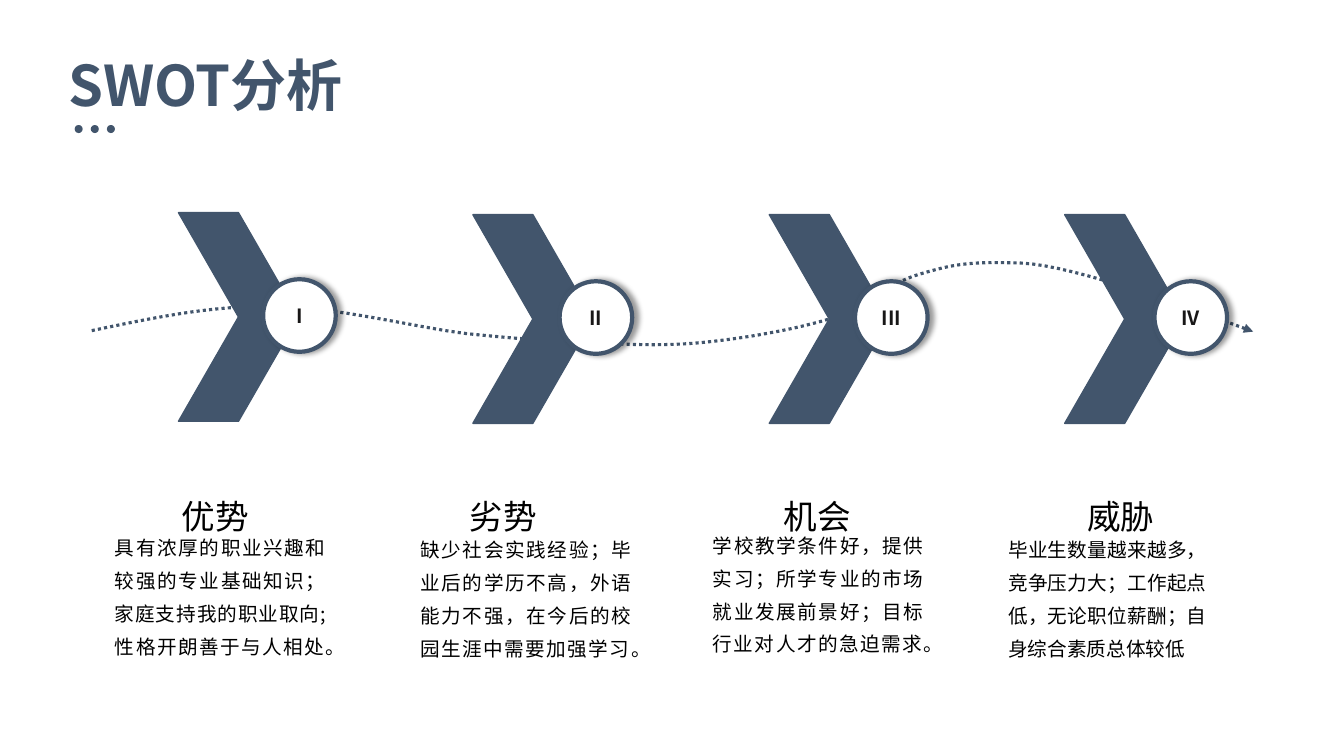
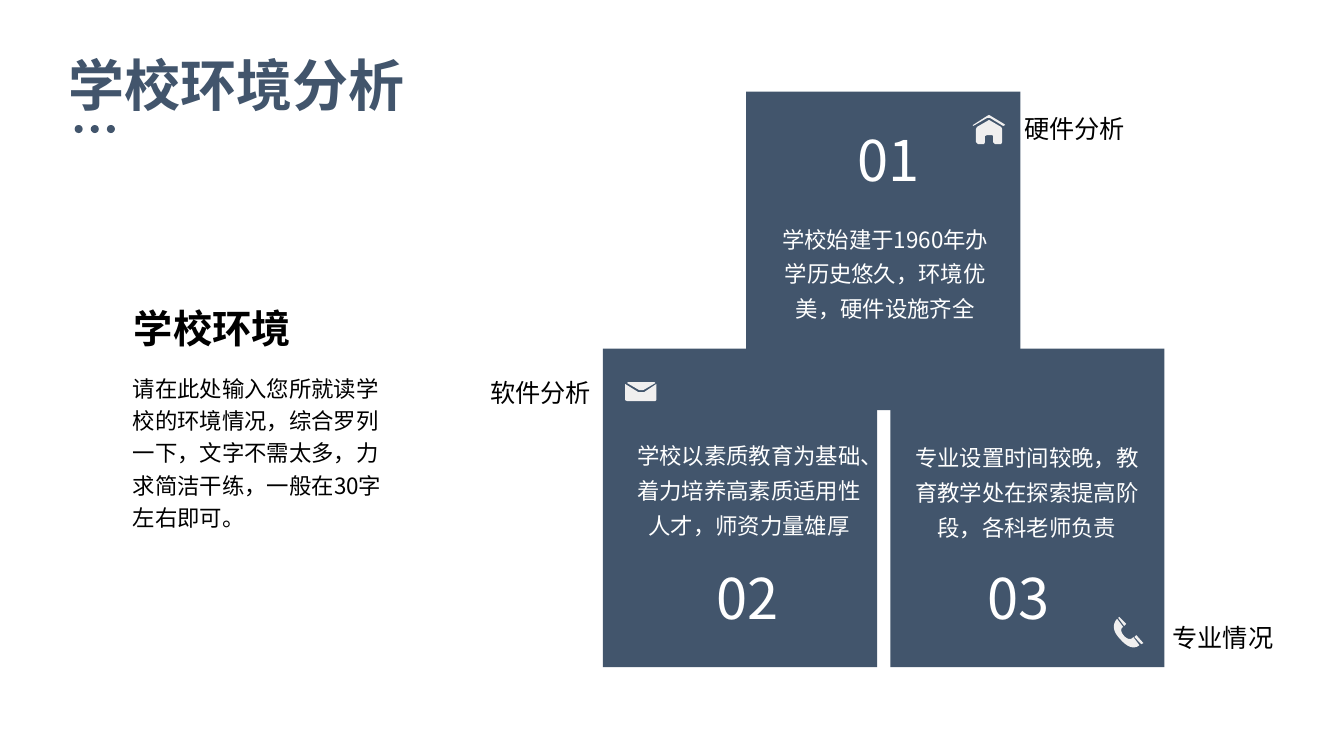
from dataclasses import dataclass
from typing import Any, NamedTuple

from lxml.etree import SubElement
from pptx import Presentation
from pptx.dml.color import RGBColor
from pptx.enum.dml import MSO_LINE
from pptx.enum.shapes import MSO_SHAPE
from pptx.enum.text import MSO_ANCHOR, MSO_AUTO_SIZE, PP_ALIGN
from pptx.oxml.ns import qn
from pptx.util import Pt

# Shared look: 100 px to the inch
PX = 9144
FONT = "Noto Sans CJK SC"
NAVY = RGBColor(0x42, 0x55, 0x6C)
BLACK = RGBColor(0x00, 0x00, 0x00)
WHITE = RGBColor(0xFF, 0xFF, 0xFF)
INK = RGBColor(0x18, 0x17, 0x17)
ICON_GREY = RGBColor(0xF0, 0xEF, 0xEF)
NO_INSETS = dict.fromkeys(("margin_left", "margin_top", "margin_right", "margin_bottom"), 0)

Point = tuple[float, float]


class Box(NamedTuple):
    left: int
    top: int
    width: int
    height: int

    def emu(self) -> list[int]:
        return [side * PX for side in self]


@dataclass(frozen=True)
class Style:
    size: int
    color: RGBColor = BLACK
    bold: bool = False
    align: PP_ALIGN = PP_ALIGN.LEFT
    spacing: Any = 1.0
    wrap: bool = True
    insets: bool = True


@dataclass(frozen=True)
class Factor:
    numeral: str
    name: str
    detail: str
    chevron: tuple[int, int]
    circle: tuple[int, int]
    name_left: int
    detail_box: Box


@dataclass(frozen=True)
class Tile:
    number: str
    label: str
    detail: str
    square: tuple[int, int]
    number_at: tuple[int, int]
    label_at: tuple[int, int]
    label_align: PP_ALIGN
    detail_box: Box


TITLE = Style(40, NAVY, True, insets=False)
NUMERAL = Style(14, INK, True, PP_ALIGN.CENTER)
FACTOR_NAME = Style(24, align=PP_ALIGN.CENTER, spacing=1.4, wrap=False, insets=False)
FACTOR_DETAIL = Style(14, align=PP_ALIGN.JUSTIFY, spacing=1.4, insets=False)
TILE_NUMBER = Style(40, WHITE, wrap=False)
TILE_DETAIL = Style(16, WHITE, align=PP_ALIGN.CENTER, spacing=1.3)
INTRO_HEAD = Style(28, bold=True)
INTRO_BODY = Style(16, spacing=Pt(23))

# Content of the SWOT slide
FACTORS = [
    Factor("I", "优势", "具有浓厚的职业兴趣和较强的专业基础知识；家庭支持我的职业取向;性格开朗善于与人相处。",
           (177, 211), (261, 277), 180, Box(114, 522, 209, 132)),
    Factor("II", "劣势", "缺少社会实践经验；毕业后的学历不高，外语能力不强，在今后的校园生涯中需要加强学习。",
           (469, 213), (555, 279), 466, Box(417, 524, 209, 132)),
    Factor("III", "机会", "学校教学条件好，提供实习；所学专业的市场就业发展前景好；目标行业对人才的急迫需求。",
           (763, 213), (848, 279), 777, Box(707, 520, 209, 132)),
    Factor("IV", "威胁", "毕业生数量越来越多，竞争压力大；工作起点低，无论职位薪酬；自身综合素质总体较低",
           (1056, 213), (1145, 279), 1078, Box(1000, 524, 197, 132)),
]
WAVE: list[Point] = [
    (91, 328), (149, 316), (208, 303), (270, 304), (332, 304), (413, 325), (463, 331),
    (512, 336), (529, 337), (568, 339), (606, 341), (652, 344), (694, 340),
    (737, 336), (788, 327), (824, 316), (860, 305), (880, 281), (912, 272),
    (943, 263), (958, 259), (1013, 261), (1067, 263), (1194, 311), (1243, 329),
]

# Content of the school slide
TILES = [
    Tile("01", "硬件分析", "学校始建于1960年办学历史悠久，环境优美，硬件设施齐全",
         (740, 91), (841, 120), (1006, 108), PP_ALIGN.LEFT, Box(759, 211, 238, 115)),
    Tile("02", "软件分析", "学校以素质教育为基础、着力培养高素质适用性人才，师资力量雄厚",
         (598, 346), (701, 554), (401, 369), PP_ALIGN.RIGHT, Box(620, 426, 246, 150)),
    Tile("03", "专业情况", "专业设置时间较晚，教育教学处在探索提高阶段，各科老师负责",
         (883, 346), (970, 554), (1153, 612), PP_ALIGN.LEFT, Box(894, 428, 249, 115)),
]
ICON_OUTLINES: list[list[Point]] = [
    # House and roof
    [(981, 119), (993, 126), (994, 128), (994, 141), (993, 143), (987, 143), (985, 141),
     (985, 135), (984, 134), (979, 134), (977, 135), (977, 141), (976, 143), (970, 143),
     (968, 141), (968, 128), (969, 126)],
    [(981, 114), (996, 123), (997, 124), (995, 125), (982, 117), (979, 117), (967, 124),
     (965, 125), (965, 124), (979, 115)],
    # Envelope flap and body
    [(638, 387), (650, 380), (649, 379), (623, 379), (622, 380), (634, 387)],
    [(639, 389), (633, 389), (620, 381), (620, 397), (622, 398), (650, 398), (651, 397),
     (651, 381)],
    # Phone earpiece and mouthpiece
    [(1134, 638), (1132, 639), (1125, 632), (1127, 630)],
    [(1117, 619), (1115, 621), (1109, 613), (1110, 612)],
]
HANDSET: list[Point] = [
    (1124, 632), (1124, 632), (1121, 637), (1115, 631), (1109, 624), (1114, 622), (1114, 622),
    (1114, 622), (1108, 614), (1108, 614), (1108, 614), (1099, 622), (1111, 634),
    (1123, 648), (1130, 640), (1130, 640),
]


def assign(target: Any, values: dict[str, Any]) -> None:
    for name, value in values.items():
        setattr(target, name, value)


def write(shape: Any, text: str, style: Style) -> None:
    frame = shape.text_frame
    frame.text = text
    assign(frame, {"word_wrap": style.wrap, **({} if style.insets else NO_INSETS)})
    paragraph = frame.paragraphs[0]
    assign(paragraph, {"alignment": style.align, "line_spacing": style.spacing})
    run = paragraph.runs[0]
    assign(run.font, {"size": Pt(style.size), "bold": style.bold, "name": FONT})
    run.font.color.rgb = style.color
    SubElement(run._r.get_or_add_rPr(), qn("a:ea"), typeface=FONT)


def add_text(slide: Any, box: Box, text: str, style: Style) -> None:
    label = slide.shapes.add_textbox(*box.emu())
    write(label, text, style)
    label.text_frame.auto_size = MSO_AUTO_SIZE.SHAPE_TO_FIT_TEXT


def paint(shape: Any, fill: RGBColor | None, line: RGBColor | None = None, width: float = 1) -> None:
    shape.shadow.inherit = False
    if fill is None:
        shape.fill.background()
    else:
        shape.fill.solid()
        shape.fill.fore_color.rgb = fill
    if line is None:
        shape.line.fill.background()
    else:
        shape.line.color.rgb = line
        shape.line.width = Pt(width)


def add_shape(slide: Any, kind: MSO_SHAPE, box: Box, fill: RGBColor,
              line: RGBColor | None = None, width: float = 1) -> Any:
    shape = slide.shapes.add_shape(kind, *box.emu())
    paint(shape, fill, line, width)
    return shape


def add_outline(slide: Any, points: list[Point], closed: bool = True) -> Any:
    start, *others = [(x * PX, y * PX) for x, y in points]
    builder = slide.shapes.build_freeform(*start, scale=1.0)
    builder.add_line_segments(others, close=closed)
    return builder.convert_to_shape()


def bezier(points: list[Point], steps: int = 16) -> list[Point]:
    """Sample a chain of cubic curves that share their end points."""
    curve = [points[0]]
    for first in range(0, len(points) - 1, 3):
        corners = points[first:first + 4]
        for step in range(1, steps + 1):
            t = step / steps
            weights = ((1 - t) ** 3, 3 * t * (1 - t) ** 2, 3 * t * t * (1 - t), t ** 3)
            curve.append((sum(w * x for w, (x, _) in zip(weights, corners)),
                          sum(w * y for w, (_, y) in zip(weights, corners))))
    return curve


def add_circle_shadow(circle: Any) -> None:
    effects = circle._element.spPr.find(qn("a:effectLst"))
    shadow = SubElement(effects, qn("a:outerShdw"), blurRad=str(Pt(4)), dist=str(Pt(3)),
                        dir="0", algn="l", rotWithShape="0")
    color = SubElement(shadow, qn("a:srgbClr"), val=str(BLACK))
    SubElement(color, qn("a:alpha"), val="40000")


def add_titled_slide(deck: Any, title: str) -> Any:
    slide = deck.slides.add_slide(deck.slide_layouts[5])
    heading = slide.shapes.title
    assign(heading, dict(zip(("left", "top", "width", "height"), Box(68, 50, 1165, 67).emu())))
    write(heading, title, TITLE)
    assign(heading.text_frame, {"vertical_anchor": MSO_ANCHOR.TOP, "auto_size": MSO_AUTO_SIZE.NONE})
    for dot in range(3):
        add_shape(slide, MSO_SHAPE.OVAL, Box(74 + 16 * dot, 124, 8, 8), NAVY)
    return slide


def build_swot(deck: Any) -> None:
    slide = add_titled_slide(deck, "SWOT分析")

    # Dotted path behind the chevrons
    wave = add_outline(slide, bezier(WAVE), closed=False)
    paint(wave, None, NAVY, 2.25)
    wave.line.dash_style = MSO_LINE.ROUND_DOT
    SubElement(wave.line._get_or_add_ln(), qn("a:tailEnd"), type="triangle")

    # Four factors
    for factor in FACTORS:
        add_shape(slide, MSO_SHAPE.CHEVRON, Box(*factor.chevron, 119, 207), NAVY, NAVY)
        circle = add_shape(slide, MSO_SHAPE.OVAL, Box(*factor.circle, 72, 72), WHITE, NAVY, 3)
        add_circle_shadow(circle)
        write(circle, factor.numeral, NUMERAL)
        circle.text_frame.vertical_anchor = MSO_ANCHOR.MIDDLE
        add_text(slide, factor.detail_box, factor.detail, FACTOR_DETAIL)
        add_text(slide, Box(factor.name_left, 476, 67, 50), factor.name, FACTOR_NAME)


def build_school(deck: Any) -> None:
    slide = add_titled_slide(deck, "学校环境分析")

    # Stacked squares, then their texts
    for tile in TILES:
        add_shape(slide, MSO_SHAPE.RECTANGLE, Box(*tile.square, 272, 316), NAVY)
    for tile in TILES:
        add_text(slide, Box(*tile.number_at, 86, 77), tile.number, TILE_NUMBER)
        add_text(slide, tile.detail_box, tile.detail, TILE_DETAIL)
        add_text(slide, Box(*tile.label_at, 195, 40), tile.label, Style(18, align=tile.label_align))

    # Icons
    for outline in [*ICON_OUTLINES, bezier(HANDSET)]:
        paint(add_outline(slide, outline), ICON_GREY)

    # Introduction on the left
    add_text(slide, Box(123, 297, 235, 57), "学校环境", INTRO_HEAD)
    add_text(slide, Box(122, 362, 272, 171),
             "请在此处输入您所就读学校的环境情况，综合罗列一下，文字不需太多，力求简洁干练，一般在30字左右即可。",
             INTRO_BODY)


def main() -> None:
    deck = Presentation()
    assign(deck, {"slide_width": 1333 * PX, "slide_height": 750 * PX})
    build_swot(deck)
    build_school(deck)
    deck.save("out.pptx")


if __name__ == "__main__":
    main()
